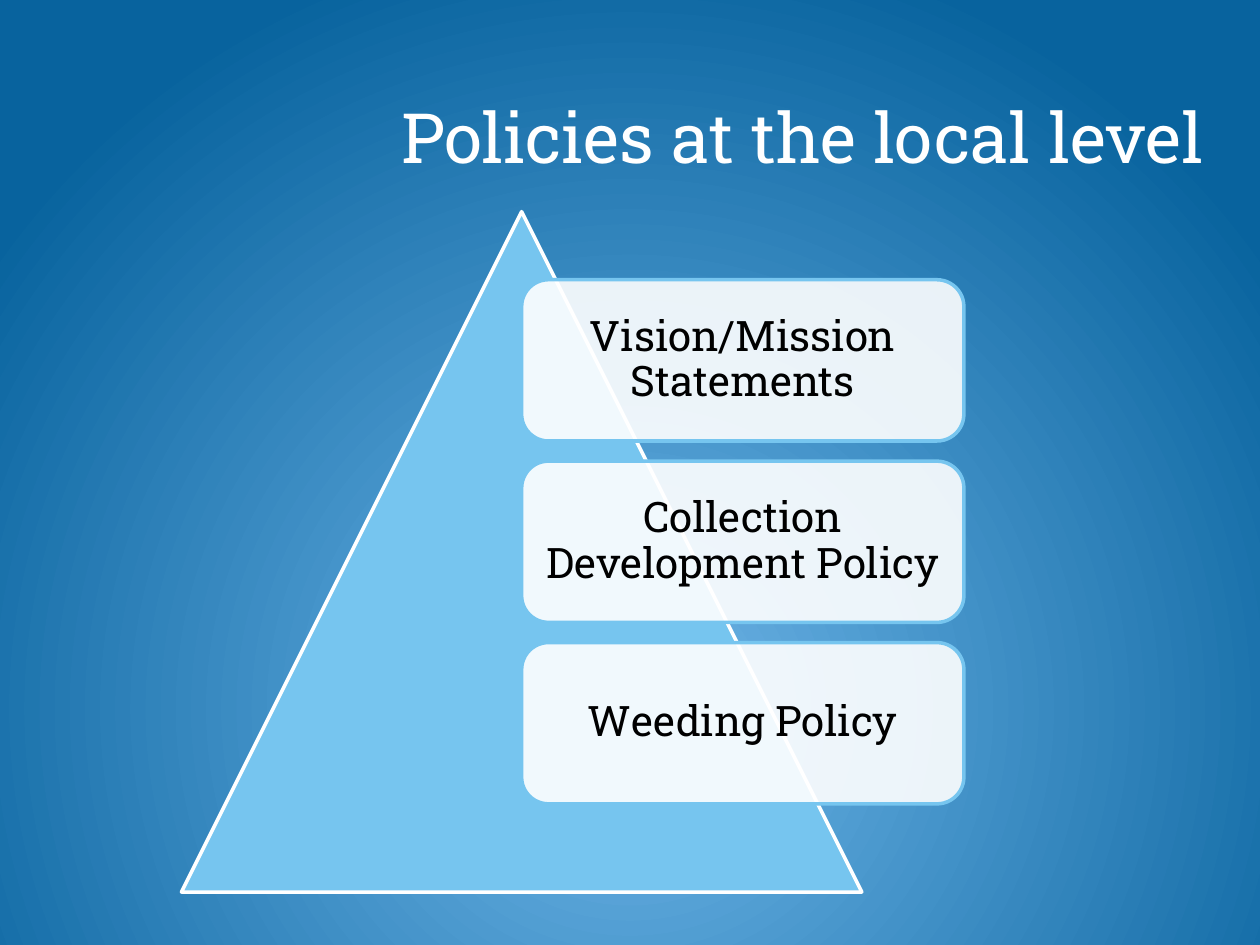
from dataclasses import dataclass

from lxml import etree
from pptx import Presentation
from pptx.dml.color import RGBColor
from pptx.enum.shapes import MSO_SHAPE
from pptx.enum.text import MSO_ANCHOR, MSO_AUTO_SIZE, PP_ALIGN
from pptx.oxml import parse_xml
from pptx.oxml.ns import nsdecls, qn
from pptx.shapes.autoshape import Shape
from pptx.slide import Slide
from pptx.text.text import TextFrame
from pptx.util import Inches, Pt

WHITE = RGBColor(0xFF, 0xFF, 0xFF)
BLACK = RGBColor(0x00, 0x00, 0x00)
SKY = RGBColor(0x76, 0xC5, 0xEF)
GLOW = RGBColor(0x70, 0xB6, 0xE8)
DEEP = RGBColor(0x08, 0x63, 0x9E)
FONT = "Roboto Slab"

PYRAMID_LEFT, PYRAMID_TOP, PYRAMID_SIDE = 1.44, 1.68, 5.4
CARD_WIDTH = PYRAMID_SIDE * 0.65
CARD_HEIGHT = 1.28
ROW_PITCH = CARD_HEIGHT * 9 / 8
INSET = Inches(0.1)


@dataclass(frozen=True)
class Policy:
    row: int
    name: str


POLICIES = [
    Policy(0, "Vision/Mission Statements"),
    Policy(1, "Collection Development Policy"),
    Policy(2, "Weeding Policy"),
]


def paint_background(slide: Slide) -> None:
    slide.background.fill.solid()
    solid = next(slide.element.iter(qn("a:solidFill")))
    glow = parse_xml(
        f'<a:gradFill {nsdecls("a")} rotWithShape="1"><a:gsLst>'
        f'<a:gs pos="0"><a:srgbClr val="{GLOW}"/></a:gs>'
        f'<a:gs pos="100000"><a:srgbClr val="{DEEP}"/></a:gs></a:gsLst>'
        '<a:path path="circle"><a:fillToRect l="50000" t="50000" r="50000" b="0"/></a:path>'
        "</a:gradFill>"
    )
    solid.getparent().replace(solid, glow)


def write(frame: TextFrame, words: str, size: float, color: RGBColor,
          align: PP_ALIGN, anchor: MSO_ANCHOR, spacing: float) -> None:
    frame.word_wrap = True
    frame.auto_size = MSO_AUTO_SIZE.NONE
    frame.vertical_anchor = anchor
    frame.margin_left = frame.margin_right = INSET
    frame.margin_top = frame.margin_bottom = INSET
    paragraph = frame.paragraphs[0]
    paragraph.alignment = align
    paragraph.line_spacing = spacing
    run = paragraph.add_run()
    run.text = words
    run.font.name = FONT
    run.font.size = Pt(size)
    run.font.color.rgb = color


def add_panel(slide: Slide, kind: MSO_SHAPE, left: float, top: float,
              width: float, height: float, fill: RGBColor, line: RGBColor) -> Shape:
    panel = slide.shapes.add_shape(
        kind, Inches(left), Inches(top), Inches(width), Inches(height))
    panel.shadow.inherit = False
    panel.fill.solid()
    panel.fill.fore_color.rgb = fill
    panel.line.color.rgb = line
    panel.line.width = Pt(2)
    return panel


def add_card(slide: Slide, policy: Policy) -> None:
    card = add_panel(
        slide, MSO_SHAPE.ROUNDED_RECTANGLE,
        PYRAMID_LEFT + PYRAMID_SIDE / 2,
        PYRAMID_TOP + PYRAMID_SIDE / 10 + policy.row * ROW_PITCH,
        CARD_WIDTH, CARD_HEIGHT, WHITE, SKY)
    fill_color = card.fill._xPr.find(qn("a:solidFill"))[0]
    etree.SubElement(fill_color, qn("a:alpha"), val="90000")
    write(card.text_frame, policy.name, 24, BLACK,
          PP_ALIGN.CENTER, MSO_ANCHOR.MIDDLE, 0.9)


def main() -> None:
    deck = Presentation()
    deck.slide_width, deck.slide_height = Inches(10), Inches(7.5)
    slide = deck.slides.add_slide(deck.slide_layouts[5])
    paint_background(slide)

    title = slide.shapes.title
    title.left, title.top = Inches(0.34), Inches(0.65)
    title.width, title.height = Inches(9.32), Inches(0.83)
    write(title.text_frame, "Policies at the local level", 39.6, WHITE,
          PP_ALIGN.RIGHT, MSO_ANCHOR.TOP, 1.0)

    add_panel(slide, MSO_SHAPE.ISOSCELES_TRIANGLE, PYRAMID_LEFT, PYRAMID_TOP,
              PYRAMID_SIDE, PYRAMID_SIDE, SKY, WHITE)
    for policy in POLICIES:
        add_card(slide, policy)
    deck.save("out.pptx")


if __name__ == "__main__":
    main()
